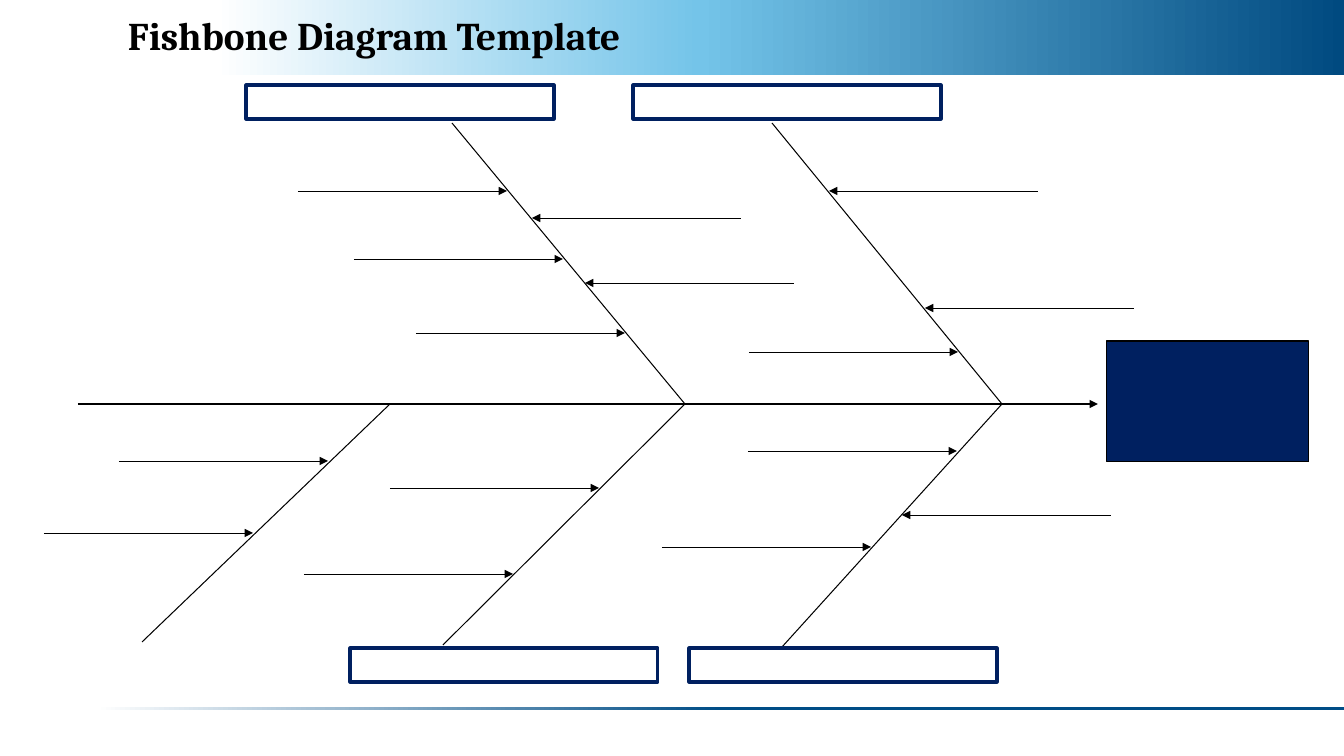
"""Build a fishbone diagram template slide."""
from copy import deepcopy

from pptx import Presentation
from pptx.dml.color import RGBColor
from pptx.enum.shapes import MSO_CONNECTOR, MSO_SHAPE
from pptx.enum.text import MSO_ANCHOR
from pptx.oxml.ns import qn
from pptx.oxml.xmlchemy import OxmlElement
from pptx.util import Emu, Pt

BLACK = RGBColor(0x00, 0x00, 0x00)
WHITE = RGBColor(0xFF, 0xFF, 0xFF)
NAVY = RGBColor(0x00, 0x20, 0x60)
SKY = RGBColor(0x74, 0xC4, 0xE9)
DEEP = RGBColor(0x00, 0x4A, 0x80)
RULE = RGBColor(0x00, 0x4D, 0x86)

TITLE = "Fishbone Diagram Template"
TITLE_AREA = (118, 0, 1226, 75)
BANDS = [
    ((0, 0, 1344, 75), [(0.16, WHITE), (0.52, SKY), (1, DEEP)]),
    ((96, 707, 1248, 3), [(0, WHITE), (0.5, RULE)]),
]
SPINE_Y, SPINE_LEFT, SPINE_RIGHT = 404, 78, 1098
EFFECT_BOX = (1107, 341, 202, 121)
CATEGORY_SIZE = (308, 34)
CATEGORIES = [(246, 85), (633, 85), (350, 648), (689, 648)]
BONES = [
    (1002, 782, 647),
    (1002, 772, 123),
    (685, 443, 645),
    (685, 452, 123),
    (390, 142, 642),
]
CAUSE_LENGTH = 209
CAUSES_FROM_LEFT = [
    (625, 333), (563, 259), (507, 191), (328, 461), (253, 533),
    (599, 488), (513, 574), (871, 547), (957, 451), (958, 352),
]
CAUSES_FROM_RIGHT = [(532, 218), (585, 283), (902, 515), (925, 308), (829, 191)]


def px(n):
    return Emu(round(n * 914400 / 100.8))


def add_box(slide, area, fill=None, line=None, width=0.75):
    sp = slide.shapes.add_shape(MSO_SHAPE.RECTANGLE, *map(px, area))
    sp.shadow.inherit = False
    if fill is None:
        sp.fill.background()
    else:
        sp.fill.solid()
        sp.fill.fore_color.rgb = fill
    if line is None:
        sp.line.fill.background()
    else:
        sp.line.color.rgb = line
        sp.line.width = Pt(width)
    return sp


def add_band(slide, area, stops):
    sp = add_box(slide, area)
    sp.fill.gradient()
    sp.fill.gradient_angle = 0
    gs_list = sp._element.spPr.find(qn("a:gradFill")).find(qn("a:gsLst"))
    while len(gs_list) < len(stops):
        gs_list.append(deepcopy(gs_list[0]))
    for stop, (position, color) in zip(sp.fill.gradient_stops, stops):
        stop.position = position
        stop.color.rgb = color


def add_line(slide, start, end, width=0.75, arrow=False):
    cn = slide.shapes.add_connector(MSO_CONNECTOR.STRAIGHT, *map(px, start + end))
    cn.line.color.rgb = BLACK
    cn.line.width = Pt(width)
    if arrow:
        tail = OxmlElement("a:tailEnd")
        tail.set("type", "triangle")
        cn.line._get_or_add_ln().append(tail)
    cn._element.spPr.append(OxmlElement("a:effectLst"))


def add_text(slide, text, area, font="Cambria", size=28, color=BLACK, bold=True):
    tf = slide.shapes.add_textbox(*map(px, area)).text_frame
    tf.word_wrap = True
    tf.vertical_anchor = MSO_ANCHOR.MIDDLE
    p = tf.paragraphs[0]
    p.line_spacing = 0.9
    r = p.add_run()
    r.text = text
    r.font.name = font
    r.font.size = Pt(size)
    r.font.bold = bold
    r.font.color.rgb = color


def main():
    prs = Presentation()
    prs.slide_width, prs.slide_height = px(1344), px(756)
    slide = prs.slides.add_slide(prs.slide_layouts[6])
    for area, stops in BANDS:
        add_band(slide, area, stops)
    add_text(slide, TITLE, TITLE_AREA)
    add_line(slide, (SPINE_LEFT, SPINE_Y), (SPINE_RIGHT, SPINE_Y), arrow=True)
    add_box(slide, EFFECT_BOX, fill=NAVY, line=BLACK)
    for joint_x, end_x, end_y in BONES:
        add_line(slide, (joint_x, SPINE_Y), (end_x, end_y))
    for corner in CATEGORIES:
        add_box(slide, corner + CATEGORY_SIZE, line=NAVY, width=2.25)
    for tips, offset in ((CAUSES_FROM_LEFT, -CAUSE_LENGTH),
                         (CAUSES_FROM_RIGHT, CAUSE_LENGTH)):
        for x, y in tips:
            add_line(slide, (x + offset, y), (x, y), width=0.5, arrow=True)
    prs.save("out.pptx")


if __name__ == "__main__":
    main()
